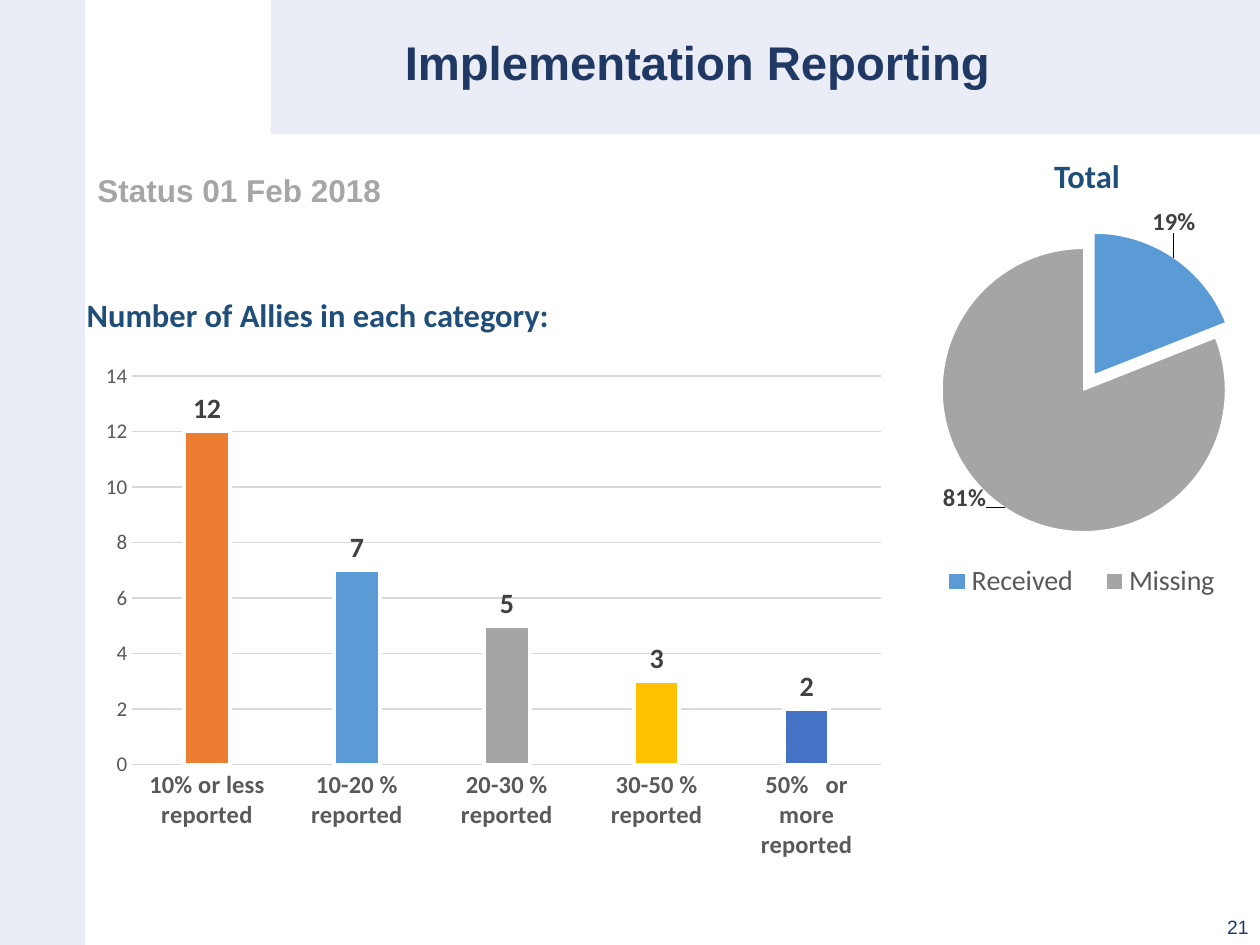
from pptx import Presentation
from pptx.chart.data import CategoryChartData
from pptx.dml.color import RGBColor
from pptx.enum.chart import XL_CHART_TYPE, XL_LABEL_POSITION, XL_LEGEND_POSITION, XL_TICK_MARK
from pptx.enum.shapes import MSO_SHAPE
from pptx.enum.text import MSO_ANCHOR, MSO_AUTO_SIZE, PP_ALIGN
from pptx.oxml import parse_xml
from pptx.oxml.ns import nsdecls, qn
from pptx.util import Emu, Pt

SCALE = 914400 / 126
LEFT, CENTER, RIGHT = PP_ALIGN.LEFT, PP_ALIGN.CENTER, PP_ALIGN.RIGHT
TOP, MIDDLE, BOTTOM = MSO_ANCHOR.TOP, MSO_ANCHOR.MIDDLE, MSO_ANCHOR.BOTTOM
NO_TICK = XL_TICK_MARK.NONE
COLORS = {
    "band": "EAEDF6", "navy": "203864", "heading": "1F4E79", "status": "A6A6A6",
    "axis": "595959", "label": "404040", "grid": "D9D9D9", "white": "FFFFFF",
    "black": "000000", "blue": "5B9BD5", "orange": "ED7D31", "gray": "A5A5A5",
    "yellow": "FFC000", "indigo": "4472C4",
}


def px(value):
    return Emu(round(value * SCALE))


def color(name):
    return RGBColor.from_string(COLORS[name])


def set_font(font, name, size, color_name, bold=False):
    font.name = name
    font.size = Pt(size)
    font.bold = bold
    font.color.rgb = color(color_name)


def set_line(line, color_name, width):
    line.color.rgb = color(color_name)
    line.width = Pt(width)


def add_band(slide, box):
    shape = slide.shapes.add_shape(MSO_SHAPE.RECTANGLE, *map(px, box))
    shape.shadow.inherit = False
    shape.fill.solid()
    shape.fill.fore_color.rgb = color("band")
    shape.line.fill.background()


def write_text(shape, text, font, align=LEFT, anchor=TOP):
    frame = shape.text_frame
    frame.word_wrap = True
    frame.auto_size = MSO_AUTO_SIZE.NONE
    frame.vertical_anchor = anchor
    paragraph = frame.paragraphs[0]
    paragraph.text = text
    paragraph.alignment = align
    set_font(paragraph.font, *font)
    return paragraph


def add_text(slide, box, text, font, align=LEFT, anchor=TOP):
    write_text(slide.shapes.add_textbox(*map(px, box)), text, font, align, anchor)


def add_title(slide, box, text):
    title = slide.shapes.title
    title.left, title.top, title.width, title.height = map(px, box)
    paragraph = write_text(title, text, ("Arial", 27, "navy", True), CENTER, MIDDLE)
    paragraph.line_spacing = 0.9


def layout_xml(x, y, width=None, height=None, inner=False):
    """Manual chart layout; without a size, x and y are offsets."""
    parts = []
    if inner:
        parts.append('<c:layoutTarget val="inner"/>')
    if width is not None:
        parts.append('<c:xMode val="edge"/><c:yMode val="edge"/>')
    parts.append(f'<c:x val="{x}"/><c:y val="{y}"/>')
    if width is not None:
        parts.append(f'<c:w val="{width}"/><c:h val="{height}"/>')
    return parse_xml(f'<c:layout {nsdecls("c")}><c:manualLayout>{"".join(parts)}'
                     '</c:manualLayout></c:layout>')


def add_chart(slide, kind, box, categories, values, plot_layout):
    data = CategoryChartData()
    data.categories = categories
    data.add_series("Series 1", values)
    chart = slide.shapes.add_chart(kind, *map(px, box), data).chart
    chart.has_title = False
    chart.has_legend = False
    set_font(chart.font, "Calibri", 10, "black")
    plot_area = chart.plots[0]._element.getparent()
    for layout in plot_area.findall(qn("c:layout")):
        plot_area.remove(layout)
    plot_area.insert(0, layout_xml(*plot_layout, inner=True))
    return chart


def color_points(series, color_names, line_width):
    for index, name in enumerate(color_names):
        point_format = series.points[index].format
        point_format.fill.solid()
        point_format.fill.fore_color.rgb = color(name)
        set_line(point_format.line, "white", line_width)


def add_pie(slide):
    chart = add_chart(slide, XL_CHART_TYPE.PIE, (868, 207, 436, 407),
                      ["Received", "", "Missing"], [19, None, 81],
                      (0.17, 0.1, 0.65, 0.7))
    chart.plots[0].vary_by_categories = True
    series = chart.plots[0].series[0]
    color_points(series, ["blue", "orange", "gray"], 0.75)

    # Pull out the received slice
    first_point = series._element.find(qn("c:dPt"))
    first_point.find(qn("c:spPr")).addprevious(
        parse_xml(f'<c:explosion {nsdecls("c")} val="13"/>'))

    # Percentages moved outside, with leader lines
    labels = series.data_labels
    labels.show_value = False
    labels.show_percentage = True
    labels.position = XL_LABEL_POSITION.INSIDE_END
    label_font = ("Calibri", 14, "label", True)
    set_font(labels.font, *label_font)
    for index in (0, 2):
        label = series.points[index].data_label
        set_font(label.font, *label_font)
        label.position = XL_LABEL_POSITION.INSIDE_END
    offsets = [(0.06, -0.15), (-0.15, 0.03)]
    for element, offset in zip(labels._element.findall(qn("c:dLbl")), offsets):
        element.insert(1, layout_xml(*offset))
        element.find(qn("c:showVal")).set("val", "0")
        element.find(qn("c:showPercent")).set("val", "1")

    # Legend without the unnamed category
    chart.has_legend = True
    legend = chart.legend
    legend.position = XL_LEGEND_POSITION.BOTTOM
    legend.include_in_layout = False
    set_font(legend.font, "Calibri", 16, "axis")
    position = legend._element.find(qn("c:legendPos"))
    for layout in legend._element.findall(qn("c:layout")):
        legend._element.remove(layout)
    position.addnext(layout_xml(0.13, 0.87, 0.72, 0.1))
    position.addnext(parse_xml(f'<c:legendEntry {nsdecls("c")}><c:idx val="1"/>'
                               '<c:delete val="1"/></c:legendEntry>'))


def add_columns(slide):
    categories = ["10% or less reported", "10-20 % reported", "20-30 % reported",
                  "30-50 % reported", "50%   or more reported"]
    chart = add_chart(slide, XL_CHART_TYPE.COLUMN_CLUSTERED, (89, 334, 799, 561),
                      categories, [12, 7, 5, 3, 2], (0.054, 0.075, 0.938, 0.693))
    plot = chart.plots[0]
    plot.vary_by_categories = False
    plot.gap_width = 229
    plot.overlap = -22
    series = plot.series[0]
    color_points(series, ["orange", "blue", "gray", "yellow", "indigo"], 2.25)
    labels = series.data_labels
    labels.show_value = True
    labels.position = XL_LABEL_POSITION.OUTSIDE_END
    set_font(labels.font, "Calibri", 16, "label", True)

    category_axis, value_axis = chart.category_axis, chart.value_axis
    for axis in (category_axis, value_axis):
        axis.major_tick_mark = axis.minor_tick_mark = NO_TICK
    set_font(category_axis.tick_labels.font, "Calibri", 14, "axis", True)
    set_line(category_axis.format.line, "grid", 0.75)
    set_font(value_axis.tick_labels.font, "Calibri", 12, "axis")
    value_axis.minimum_scale, value_axis.maximum_scale = 0, 14
    value_axis.major_unit = 2
    value_axis.format.line.fill.background()
    set_line(value_axis.major_gridlines.format.line, "grid", 0.75)


def main():
    presentation = Presentation()
    presentation.slide_width, presentation.slide_height = px(1260), px(945)
    slide = presentation.slides.add_slide(presentation.slide_layouts[5])

    # Side and header bands, behind the title
    add_band(slide, (0, 0, 85, 945))
    add_band(slide, (271, 0, 989, 134))
    title_element = slide.shapes.title._element
    title_element.getparent().append(title_element)
    add_title(slide, (203, 26, 989, 78), "Implementation Reporting")
    add_text(slide, (978, 895, 283, 50), "21", ("Arial", 11, "navy"), RIGHT, BOTTOM)
    add_text(slide, (85, 165, 1175, 89), "Status 01 Feb 2018",
             ("Arial", 18, "status", True))

    # Charts and their headings
    add_pie(slide)
    add_columns(slide)
    heading_font = ("Calibri", 18.6, "heading", True)
    add_text(slide, (25, 289, 586, 52), "Number of Allies in each category:",
             heading_font, CENTER)
    add_text(slide, (794, 150, 586, 52), "Total", heading_font, CENTER)

    presentation.save("out.pptx")


if __name__ == "__main__":
    main()
